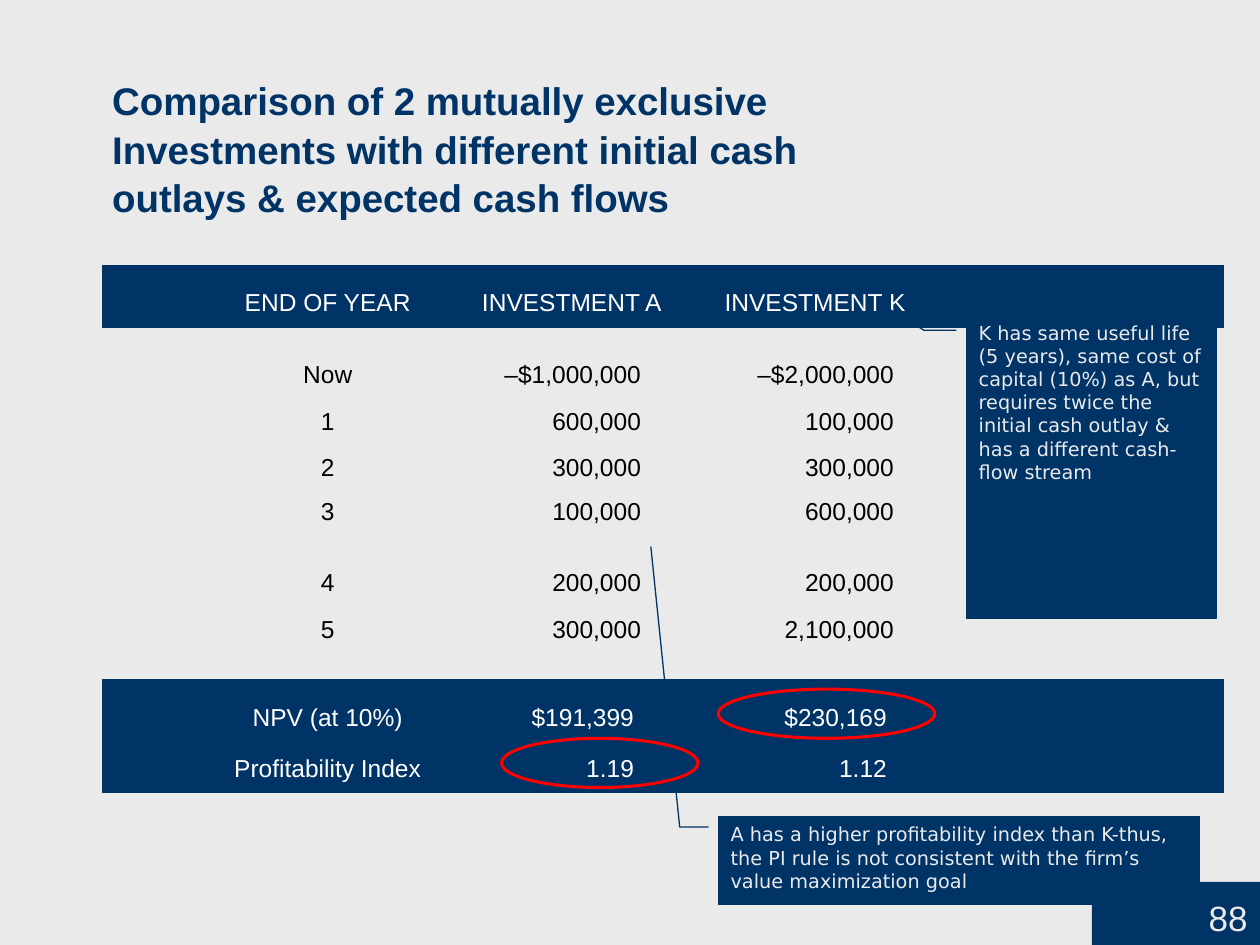
from dataclasses import dataclass

from pptx import Presentation
from pptx.dml.color import RGBColor
from pptx.enum.shapes import MSO_SHAPE
from pptx.enum.text import MSO_ANCHOR, PP_ALIGN
from pptx.oxml.ns import qn
from pptx.util import Pt

NAVY = RGBColor(0x00, 0x33, 0x66)
PALE = RGBColor(0xEA, 0xEA, 0xEA)
WHITE = RGBColor(0xFF, 0xFF, 0xFF)
BLACK = RGBColor(0x00, 0x00, 0x00)
RED = RGBColor(0xFF, 0x00, 0x00)
NO_STYLE = "{2D5ABB26-0587-4C30-8999-92F81FD0307C}"
COLUMN_WIDTHS = (208, 121, 312)
YEAR_INDENT = 50    # centres the year column's text
K_EXTRA = 155       # free space at the right of investment K


@dataclass
class Box:
    left: float
    top: float
    width: float
    height: float

    def lengths(self) -> tuple:
        return Pt(self.left), Pt(self.top), Pt(self.width), Pt(self.height)


@dataclass
class Row:
    cells: tuple
    height: float
    band: bool = False
    inset: float = 21       # right margin of the figures
    bottom: float = 6
    header: bool = False


@dataclass
class Callout:
    box: Box
    leader: tuple           # y, x pairs as shares of the box
    text: str


ROWS = (
    Row(("END OF YEAR", "INVESTMENT A", "INVESTMENT K"), 36, band=True, header=True),
    Row(("Now", "–$1,000,000", "–$2,000,000"), 41),
    Row(("1", "600,000", "100,000"), 27),
    Row(("2", "300,000", "300,000"), 26),
    Row(("3", "100,000", "600,000"), 25),
    Row(("4", "200,000", "200,000"), 41),
    Row(("5", "300,000", "2,100,000"), 41, bottom=20),
    Row(("NPV (at 10%)", "$191,399", "$230,169"), 36, band=True, inset=25),
    Row(("Profitability Index", "1.19", "1.12"), 29, band=True, inset=25),
)
CALLOUTS = (
    Callout(Box(552.2, 180, 142.6, 173.5), (0.05, -0.04, 0.05, -0.17, -0.02, -0.31),
            "K has same useful life (5 years), same cost of capital (10%) as A, "
            "but requires twice the initial cash outlay & has a different "
            "cash-flow stream"),
    Callout(Box(410.4, 466.6, 275, 50.4), (0.12, -0.02, 0.12, -0.08, -3.06, -0.14),
            "A has a higher profitability index than K-thus, the PI rule is not "
            "consistent with the firm’s value maximization goal"),
)
HIGHLIGHTS = (Box(410.4, 393.8, 123.8, 28.1), Box(286.6, 421.9, 112.3, 28.1))


def set_font(p, name: str, size: float, color: RGBColor, bold: bool = False) -> None:
    p.font.name, p.font.size, p.font.bold = name, Pt(size), bold
    p.font.color.rgb = color


def add_panel(s, kind: MSO_SHAPE, box: Box, text: str, font: str, size: float):
    """Add a navy shape with pale, left-aligned text at its top."""
    sp = s.shapes.add_shape(kind, *box.lengths())
    sp.shadow.inherit = False
    sp.fill.solid()
    sp.fill.fore_color.rgb = NAVY
    sp.line.color.rgb = NAVY
    sp.line.width = Pt(0.75)
    tf = sp.text_frame
    tf.word_wrap = True
    tf.vertical_anchor = MSO_ANCHOR.TOP
    p = tf.paragraphs[0]
    p.text = text
    p.alignment = PP_ALIGN.LEFT
    set_font(p, font, size, PALE)
    return sp


def fill_row(table, index: int, row: Row) -> None:
    table.rows[index].height = Pt(row.height)
    for col, text in enumerate(row.cells):
        cell = table.cell(index, col)
        if row.band:
            cell.fill.solid()
            cell.fill.fore_color.rgb = NAVY
        else:
            cell.fill.background()
        cell.vertical_anchor = MSO_ANCHOR.BOTTOM
        cell.margin_top, cell.margin_bottom = Pt(0), Pt(row.bottom)
        centred = row.header or col == 0
        right = 0 if centred else row.inset
        if col == 2:
            right += K_EXTRA + (0 if centred else 12.5)
        cell.margin_left = Pt(YEAR_INDENT if col == 0 else 0)
        cell.margin_right = Pt(right)
        p = cell.text_frame.paragraphs[0]
        p.text = text
        p.alignment = PP_ALIGN.CENTER if centred else PP_ALIGN.RIGHT
        set_font(p, "Arial", 14, WHITE if row.band else BLACK)


def add_comparison(s) -> None:
    box = Box(58.3, 151.2, sum(COLUMN_WIDTHS), sum(r.height for r in ROWS))
    table = s.shapes.add_table(len(ROWS), len(COLUMN_WIDTHS), *box.lengths()).table
    table.first_row = table.horz_banding = False
    next(table._tbl.iter(qn("a:tableStyleId"))).text = NO_STYLE
    for column, width in zip(table.columns, COLUMN_WIDTHS):
        column.width = Pt(width)
    for index, row in enumerate(ROWS):
        fill_row(table, index, row)


def add_highlight(s, box: Box) -> None:
    sp = s.shapes.add_shape(MSO_SHAPE.OVAL, *box.lengths())
    sp.shadow.inherit = False
    sp.fill.background()
    sp.line.color.rgb = RED
    sp.line.width = Pt(1.75)


def format_title(s) -> None:
    title = s.shapes.title
    title.left, title.top, title.width, title.height = Box(56.9, 43.2, 643, 86.4).lengths()
    tf = title.text_frame
    tf.word_wrap = True
    tf.vertical_anchor = MSO_ANCHOR.BOTTOM
    p = tf.paragraphs[0]
    p.text = ("Comparison of 2 mutually exclusive\vInvestments with different "
              "initial cash\voutlays & expected cash flows")
    p.alignment = PP_ALIGN.LEFT
    p.line_spacing = 1.05
    set_font(p, "Arial", 22, NAVY, bold=True)


def main() -> None:
    prs = Presentation()
    prs.slide_width, prs.slide_height = Pt(720), Pt(540)
    s = prs.slides.add_slide(prs.slide_layouts[5])
    s.background.fill.solid()
    s.background.fill.fore_color.rgb = PALE

    # Title and page number
    format_title(s)
    number = add_panel(s, MSO_SHAPE.RECTANGLE, Box(624, 504, 96, 36), "88", "Arial", 20)
    number.line.fill.background()
    number.text_frame.vertical_anchor = MSO_ANCHOR.BOTTOM
    number.text_frame.paragraphs[0].alignment = PP_ALIGN.RIGHT

    # Cash flows and results
    add_comparison(s)

    # Remarks with leader lines
    for callout in CALLOUTS:
        sp = add_panel(s, MSO_SHAPE.LINE_CALLOUT_2, callout.box, callout.text,
                       "DejaVu Sans", 11)
        for i, value in enumerate(callout.leader):
            sp.adjustments[i] = value

    # Rings around the better results
    for box in HIGHLIGHTS:
        add_highlight(s, box)

    prs.save("out.pptx")


if __name__ == "__main__":
    main()
